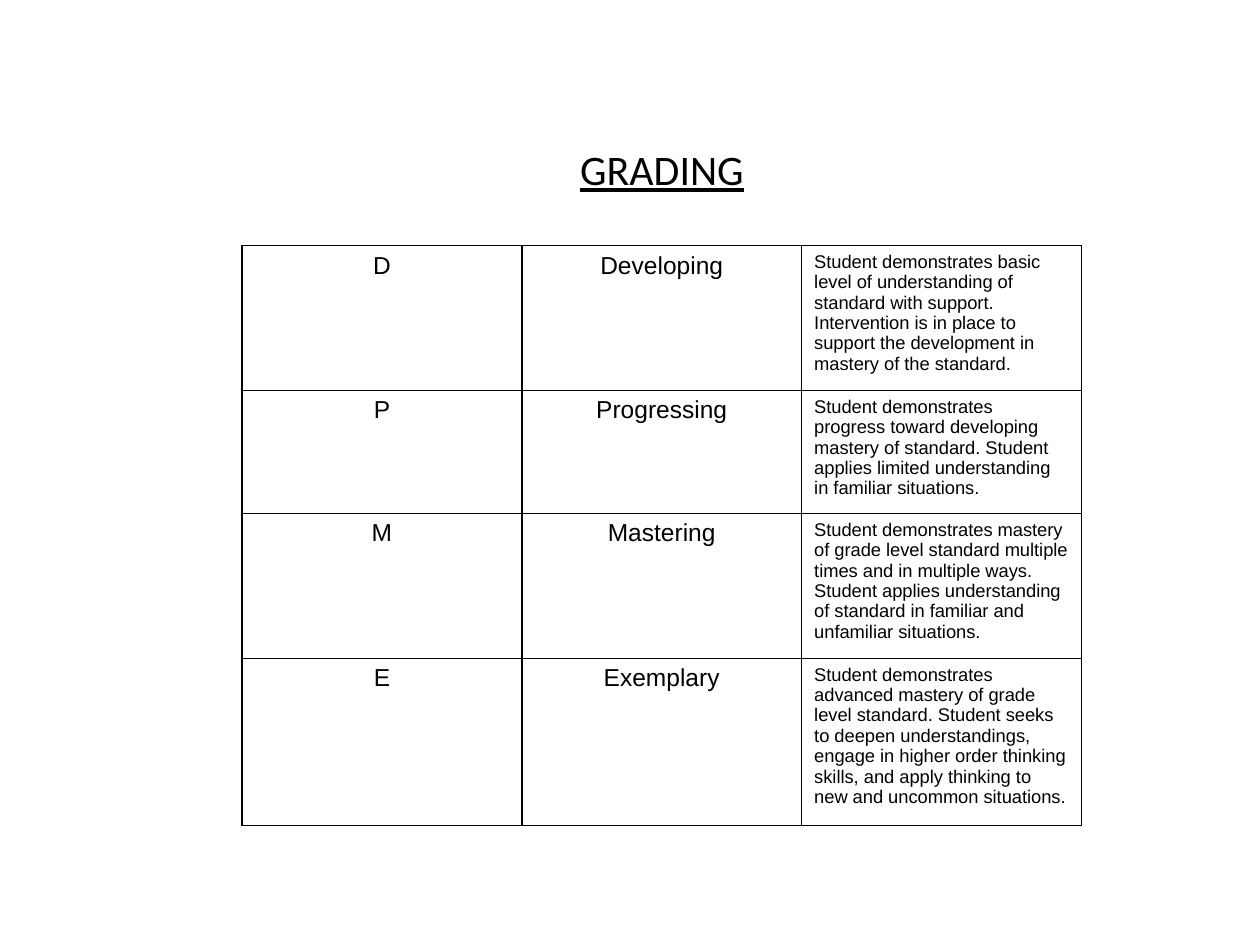
import pptx
import pptx.util
import pptx.dml.color
import pptx.enum.text
import pptx.oxml
import pptx.oxml.ns
from pptx.util import Cm, Pt

BLACK = pptx.dml.color.RGBColor(0, 0, 0)
ALIGN = pptx.enum.text.PP_ALIGN

TITLE = "GRADING"
GRADES = [
    ("D", "Developing", [
        "Student demonstrates basic level of understanding of standard with support.",
        "Intervention is in place to support the development in mastery of the standard."], 2.92),
    ("P", "Progressing", [
        "Student demonstrates progress toward developing mastery of standard. "
        "Student applies limited understanding in familiar situations."], 2.48),
    ("M", "Mastering", [
        "Student demonstrates mastery of grade level standard multiple times and in "
        "multiple ways. Student applies understanding of standard in familiar and "
        "unfamiliar situations."], 2.92),
    ("E", "Exemplary", [
        "Student demonstrates advanced mastery of grade level standard. Student seeks to "
        "deepen understandings, engage in higher order thinking skills, and apply "
        "thinking to new and uncommon situations."], 3.37),
]
COLUMN_WIDTH = 5.64
TITLE_FONT = {"name": "Calibri", "size": Pt(24), "underline": True}
LABEL_FONT = {"name": "Arial", "size": Pt(14)}
DESCRIPTION_FONT = {"name": "Arial", "size": Pt(10.5)}


def write(text_frame, lines, font, alignment):
    for index, line in enumerate(lines):
        paragraph = text_frame.add_paragraph() if index else text_frame.paragraphs[0]
        paragraph.alignment = alignment
        run = paragraph.add_run()
        run.text = line
        run.font.color.rgb = BLACK
        for name, value in font.items():
            setattr(run.font, name, value)


def add_borders(cell):
    properties = cell._tc.get_or_add_tcPr()
    for position, side in enumerate(("lnL", "lnR", "lnT", "lnB")):
        properties.insert(position, pptx.oxml.parse_xml(
            f'<a:{side} {pptx.oxml.ns.nsdecls("a")} w="{Pt(1)}"><a:solidFill>'
            f'<a:srgbClr val="{BLACK}"/></a:solidFill></a:{side}>'))


presentation = pptx.Presentation()
presentation.slide_width, presentation.slide_height = Cm(25.4), Cm(19.05)
slide = presentation.slides.add_slide(presentation.slide_layouts[6])

title = slide.shapes.add_textbox(Cm(3.86), Cm(2.77), Cm(18.97), Cm(1.27))
title.text_frame.word_wrap = True
write(title.text_frame, [TITLE], TITLE_FONT, ALIGN.CENTER)

table = slide.shapes.add_table(
    len(GRADES), 3, Cm(4.88), Cm(4.95), Cm(3 * COLUMN_WIDTH),
    Cm(sum(grade[-1] for grade in GRADES))).table
table.first_row = table.horz_banding = False
for column in table.columns:
    column.width = Cm(COLUMN_WIDTH)

for row, (letter, level, description, height) in zip(table.rows, GRADES):
    row.height = Cm(height)
    contents = [
        ([letter], LABEL_FONT, ALIGN.CENTER),
        ([level], LABEL_FONT, ALIGN.CENTER),
        (description, DESCRIPTION_FONT, ALIGN.LEFT),
    ]
    for cell, content in zip(row.cells, contents):
        write(cell.text_frame, *content)
        cell.fill.background()
        add_borders(cell)

presentation.save("out.pptx")
